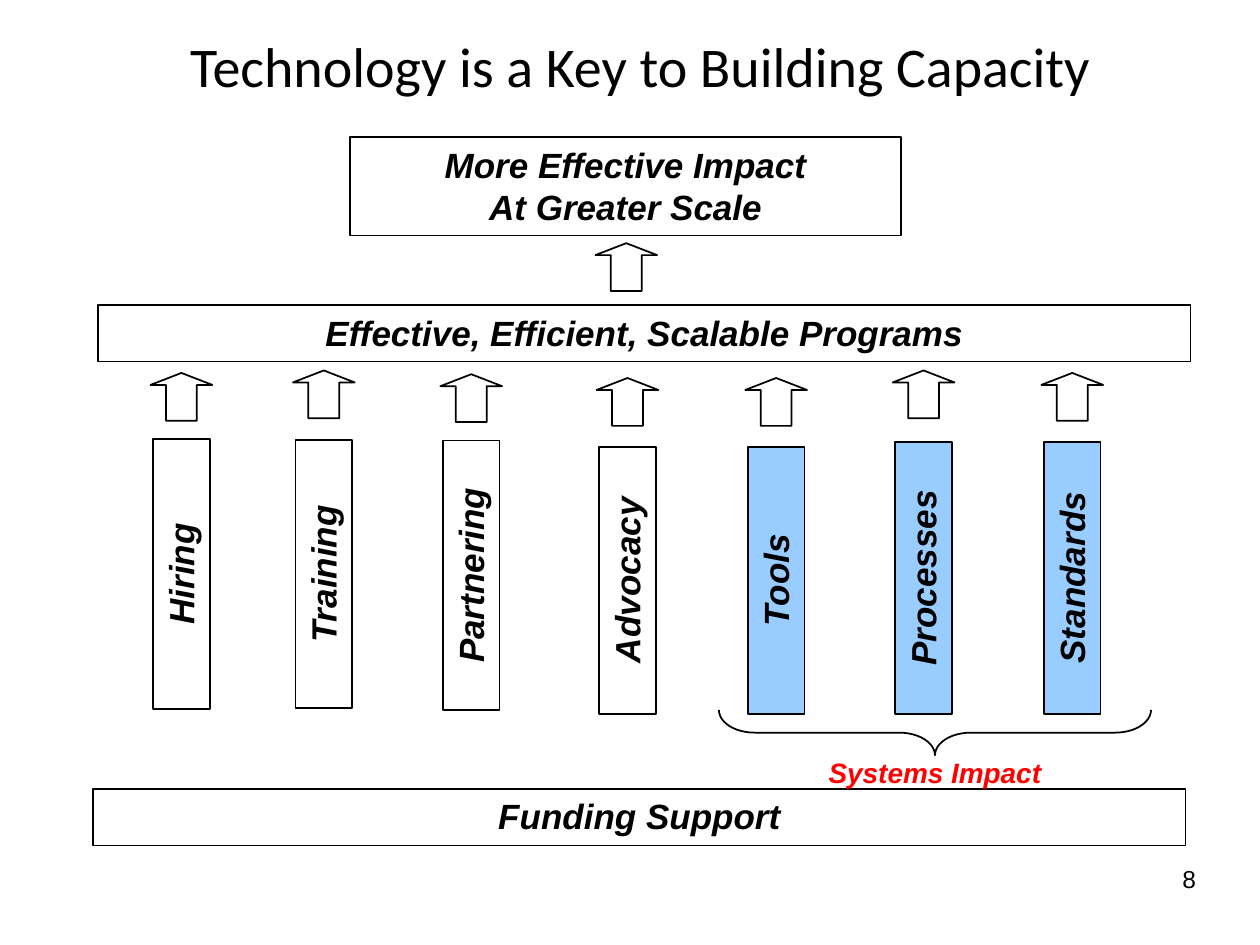
from dataclasses import dataclass
from typing import NamedTuple

from pptx import Presentation
from pptx.dml import color
from pptx.enum import shapes, text
from pptx.util import Inches, Pt


@dataclass(frozen=True)
class Theme:
    ink: str = "000000"
    accent: str = "FF0000"
    highlight: str = "99CCFF"
    title_font: str = "Calibri"
    body_font: str = "Arial"
    title_size: int = 32
    box_size: int = 20
    label_size: int = 16
    number_size: int = 14
    line_width: int = 1


class Area(NamedTuple):
    left: float
    top: float
    width: float
    height: float


class Bar(NamedTuple):
    caption: str
    area: Area


class Pillar(NamedTuple):
    caption: str
    center: float
    top: float
    length: float
    arrow_top: float
    fill: str | None = None


THEME = Theme()
BAR_HEIGHT = 0.45
ARROW_WIDTH, ARROW_HEIGHT = 0.49, 0.38

BARS = [
    Bar("More Effective Impact\nAt Greater Scale", Area(2.78, 1.09, 4.37, 0.78)),
    Bar("Effective, Efficient, Scalable Programs", Area(0.78, 2.42, 8.67, BAR_HEIGHT)),
    Bar("Funding Support", Area(0.74, 6.26, 8.67, BAR_HEIGHT)),
]
PILLARS = [
    Pillar("Hiring", 1.44, 4.33, 2.14, 2.96),
    Pillar("Training", 2.57, 4.33, 2.13, 2.94),
    Pillar("Partnering", 3.74, 4.34, 2.14, 2.97),
    Pillar("Advocacy", 4.98, 4.38, 2.12, 3.0),
    Pillar("Tools", 6.16, 4.38, 2.12, 3.0, THEME.highlight),
    Pillar("Processes", 7.33, 4.36, 2.16, 2.94, THEME.highlight),
    Pillar("Standards", 8.51, 4.36, 2.16, 2.96, THEME.highlight),
]


def write_text(shape, content: str, *, size: int = THEME.box_size,
               font: str = THEME.body_font, ink: str = THEME.ink,
               strong: bool = True, align=text.PP_ALIGN.CENTER,
               anchor=text.MSO_ANCHOR.TOP) -> None:
    frame = shape.text_frame
    frame.word_wrap = True
    frame.vertical_anchor = anchor
    frame.text = content
    for paragraph in frame.paragraphs:
        paragraph.alignment = align
        paragraph.font.size = Pt(size)
        paragraph.font.name = font
        paragraph.font.bold = paragraph.font.italic = strong
        paragraph.font.color.rgb = color.RGBColor.from_string(ink)


def add_label(slide, content: str, area: Area, **style) -> None:
    box = slide.shapes.add_textbox(*map(Inches, area))
    write_text(box, content, **style)


def add_outline(slide, kind, area: Area, fill: str | None = None,
                rotation: float = 0):
    shape = slide.shapes.add_shape(kind, *map(Inches, area))
    shape.shadow.inherit = False
    shape.rotation = rotation
    if fill:
        shape.fill.solid()
        shape.fill.fore_color.rgb = color.RGBColor.from_string(fill)
    else:
        shape.fill.background()
    shape.line.color.rgb = color.RGBColor.from_string(THEME.ink)
    shape.line.width = Pt(THEME.line_width)
    return shape


def add_arrow(slide, center: float, top: float) -> None:
    area = Area(center - ARROW_WIDTH / 2, top, ARROW_WIDTH, ARROW_HEIGHT)
    arrow = add_outline(slide, shapes.MSO_SHAPE.UP_ARROW, area)
    arrow.adjustments[0] = 0.5
    arrow.adjustments[1] = 0.25


def add_bar(slide, bar: Bar) -> None:
    write_text(add_outline(slide, shapes.MSO_SHAPE.RECTANGLE, bar.area), bar.caption)


def add_pillar(slide, pillar: Pillar) -> None:
    area = Area(pillar.center - pillar.length / 2, pillar.top, pillar.length, BAR_HEIGHT)
    box = add_outline(slide, shapes.MSO_SHAPE.RECTANGLE, area, pillar.fill, rotation=270)
    write_text(box, pillar.caption)
    add_arrow(slide, pillar.center, pillar.arrow_top)


def main() -> None:
    presentation = Presentation()
    presentation.slide_width = Inches(10)
    presentation.slide_height = Inches(7.5)
    slide = presentation.slides.add_slide(presentation.slide_layouts[6])

    add_label(slide, "Technology is a Key to Building Capacity",
              Area(0.42, 0.25, 9.33, 0.58), size=THEME.title_size,
              font=THEME.title_font, strong=False, anchor=text.MSO_ANCHOR.BOTTOM)
    for bar in BARS:
        add_bar(slide, bar)
    add_arrow(slide, 4.97, 1.93)
    for pillar in PILLARS:
        add_pillar(slide, pillar)

    brace = add_outline(slide, shapes.MSO_SHAPE.RIGHT_BRACE,
                        Area(7.24, 4.1, 0.36, 3.43), rotation=90)
    brace.adjustments[0] = 0.79
    brace.adjustments[1] = 0.5
    add_label(slide, "Systems Impact", Area(6.42, 5.95, 2, 0.37),
              size=THEME.label_size, ink=THEME.accent)
    add_label(slide, "8", Area(6.42, 6.81, 3.17, 0.52), size=THEME.number_size,
              strong=False, align=text.PP_ALIGN.RIGHT)

    presentation.save("out.pptx")


if __name__ == "__main__":
    main()
